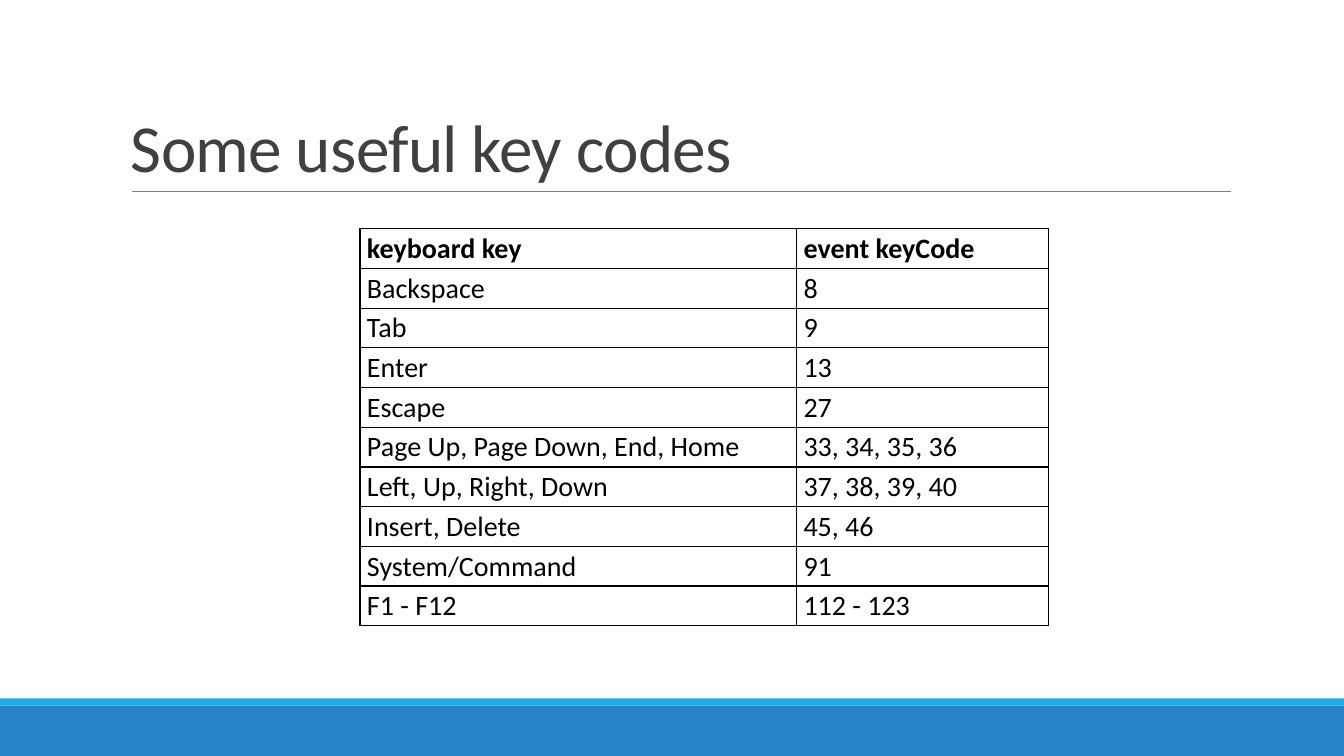
from lxml import etree
from pptx import Presentation
from pptx import util as u
from pptx.dml.color import RGBColor
from pptx.enum import shapes, text
from pptx.oxml import ns

BLUE = RGBColor(0x26, 0x83, 0xC6)
CYAN = RGBColor(0x1C, 0xAD, 0xE4)
GRAY = RGBColor(0x80, 0x80, 0x80)
DARK = RGBColor(0x40, 0x40, 0x40)
BLACK = RGBColor(0, 0, 0)

KEY_CODES = [
    ("keyboard key", "event keyCode"),
    ("Backspace", "8"),
    ("Tab", "9"),
    ("Enter", "13"),
    ("Escape", "27"),
    ("Page Up, Page Down, End, Home", "33, 34, 35, 36"),
    ("Left, Up, Right, Down", "37, 38, 39, 40"),
    ("Insert, Delete", "45, 46"),
    ("System/Command", "91"),
    ("F1 - F12", "112 - 123"),
]


class SlideBuilder:
    """Holds the slide and its style."""

    font = "Calibri"

    def __init__(self, slide):
        self.slide = slide

    def add_words(self, paragraph, words, size, color, bold=False):
        run = paragraph.add_run()
        run.text = words
        run.font.name = self.font
        run.font.size = u.Pt(size)
        run.font.bold = bold
        run.font.color.rgb = color
        return run

    def band(self, top, height, color):
        band = self.slide.shapes.add_shape(
            shapes.MSO_SHAPE.RECTANGLE, 0, u.Inches(top), u.Inches(13.33), u.Inches(height))
        band.shadow.inherit = False
        band.fill.solid()
        band.fill.fore_color.rgb = color
        band.line.fill.background()

    def rule(self, left, right, y):
        rule = self.slide.shapes.add_connector(
            shapes.MSO_CONNECTOR.STRAIGHT,
            u.Inches(left), u.Inches(y), u.Inches(right), u.Inches(y))
        rule.line.color.rgb = GRAY
        rule.line.width = u.Pt(0.5)
        etree.SubElement(rule._element.spPr, ns.qn("a:effectLst"))

    def title(self, words, left, top, width, height):
        box = self.slide.shapes.add_textbox(
            u.Inches(left), u.Inches(top), u.Inches(width), u.Inches(height))
        frame = box.text_frame
        frame.word_wrap = True
        frame.vertical_anchor = text.MSO_ANCHOR.BOTTOM
        heading = frame.paragraphs[0]
        heading.line_spacing = 0.85
        run = self.add_words(heading, words, 48, DARK)
        run.font._element.set("spc", "-50")

    def border(self, cell):
        props = cell._tc.get_or_add_tcPr()
        for position, side in enumerate(("lnL", "lnR", "lnT", "lnB")):
            edge = etree.Element(ns.qn(f"a:{side}"), w=str(u.Pt(1)))
            fill = etree.SubElement(edge, ns.qn("a:solidFill"))
            etree.SubElement(fill, ns.qn("a:srgbClr"), val=str(BLACK))
            props.insert(position, edge)

    def table(self, rows, left, top, widths, row_height):
        table = self.slide.shapes.add_table(
            len(rows), len(widths), u.Inches(left), u.Inches(top),
            u.Inches(sum(widths)), u.Inches(row_height * len(rows))).table
        table.horz_banding = False
        for column, width in zip(table.columns, widths):
            column.width = u.Inches(width)
        for r, row in enumerate(rows):
            table.rows[r].height = u.Inches(row_height)
            for c, words in enumerate(row):
                cell = table.cell(r, c)
                cell.fill.background()
                cell.margin_left = cell.margin_right = u.Inches(0.07)
                cell.margin_top = cell.margin_bottom = u.Inches(0.03)
                self.border(cell)
                self.add_words(cell.text_frame.paragraphs[0], words, 20, BLACK, bold=r == 0)


def main():
    deck = Presentation()
    deck.slide_width = u.Inches(13.33)
    deck.slide_height = u.Inches(7.5)
    builder = SlideBuilder(deck.slides.add_slide(deck.slide_layouts[6]))

    # Footer bands
    builder.band(7, 0.5, BLUE)
    builder.band(6.93, 0.07, CYAN)

    # Title and its rule
    builder.rule(1.31, 12.21, 1.9)
    builder.title("Some useful key codes", 1.2, 0.31, 11, 1.59)

    # Key code table
    builder.table(KEY_CODES, 3.57, 2.27, (4.33, 2.5), 0.39)

    deck.save("out.pptx")


if __name__ == "__main__":
    main()
